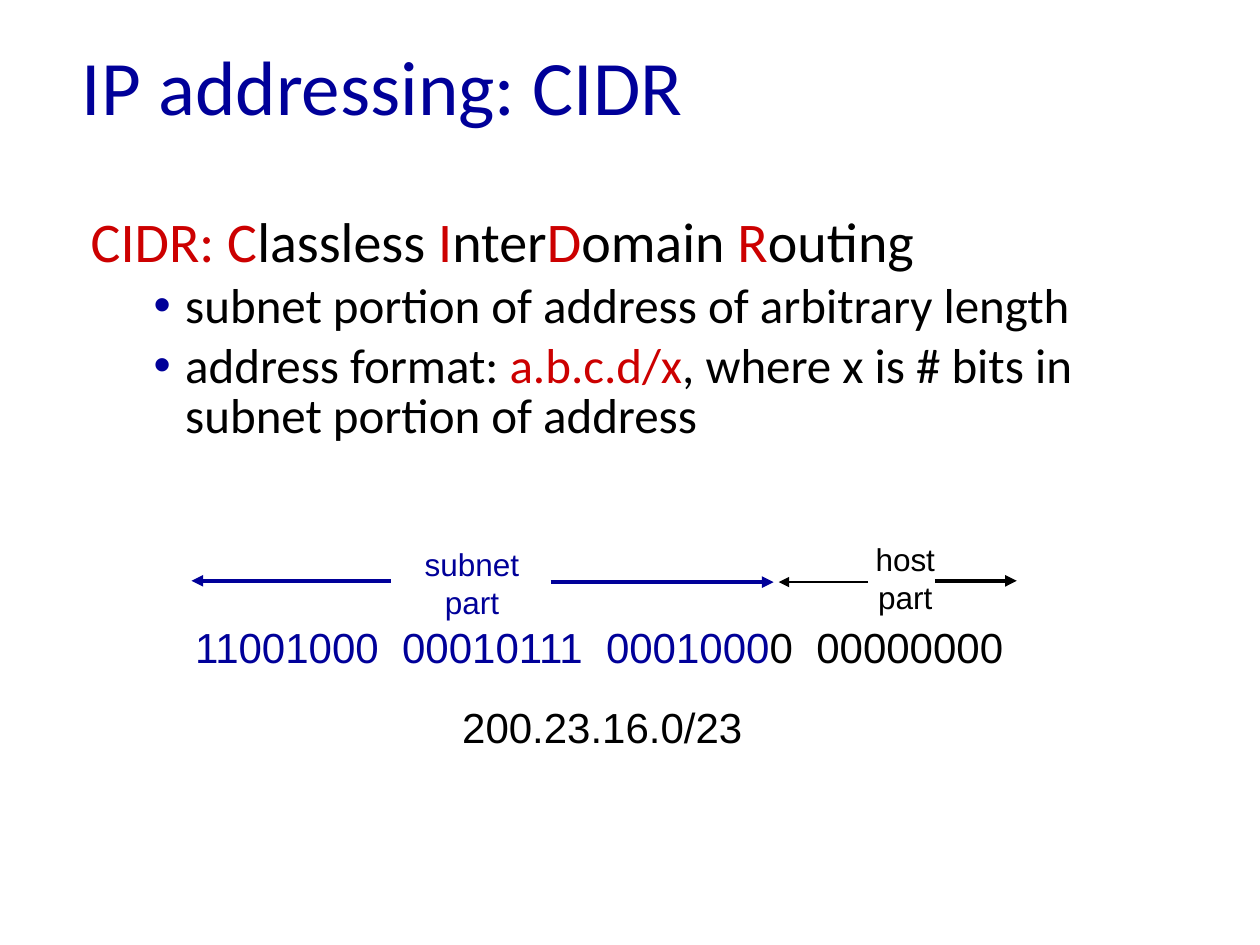
"""Build a slide on CIDR addressing with a split of the address bits."""
from lxml import etree
from pptx import Presentation
from pptx.dml.color import RGBColor
from pptx.enum import shapes as sh, text as tx
from pptx.oxml import ns
from pptx.util import Inches, Pt

BLUE = RGBColor(0x00, 0x00, 0x99)
RED = RGBColor(0xCC, 0x00, 0x00)
BLACK = RGBColor(0x00, 0x00, 0x00)


def write(para, runs, face, size):
    for words, color in runs:
        run = para.add_run()
        run.text = words
        for key, value in {"name": face, "size": Pt(size)}.items():
            setattr(run.font, key, value)
        run.font.color.rgb = color


def place(shape, *box):
    for key, value in zip(("left", "top", "width", "height"), box):
        setattr(shape, key, Inches(value))


deck = Presentation()
deck.slide_width, deck.slide_height = Inches(10), Inches(7.5)
slide = deck.slides.add_slide(deck.slide_layouts[1])

title, body = slide.placeholders
place(title, 0.55, 0.21, 8.5, 0.93)
place(body, 0.62, 1.67, 8.87, 3.47)
for holder in (title, body):
    holder.text_frame.auto_size = tx.MSO_AUTO_SIZE.NONE
title.text_frame.vertical_anchor = tx.MSO_ANCHOR.MIDDLE
head = title.text_frame.paragraphs[0]
head.alignment = tx.PP_ALIGN.LEFT
write(head, [("IP addressing: CIDR", BLUE)], "Calibri", 44)

points = [
    (0, 32, [("CIDR: C", RED), ("lassless ", BLACK), ("I", RED), ("nter", BLACK),
             ("D", RED), ("omain ", BLACK), ("R", RED), ("outing", BLACK)]),
    (1, 28, [("subnet portion of address of arbitrary length", BLACK)]),
    (1, 28, [("address format: ", BLACK), ("a.b.c.d/x", RED),
             (", where x is # bits in subnet portion of address", BLACK)]),
]
frame = body.text_frame
for num, (level, size, runs) in enumerate(points):
    para = frame.add_paragraph() if num else frame.paragraphs[0]
    para.level = level
    para.line_spacing = 0.85
    write(para, runs, "Calibri", size)
    props = para._p.get_or_add_pPr()
    left, hang = ((0.38, -0.38), (0.75, -0.25))[level]
    props.set("marL", str(Inches(left)))
    props.set("indent", str(Inches(hang)))
    if level:
        tint = etree.SubElement(props, ns.qn("a:buClr"))
        etree.SubElement(tint, ns.qn("a:srgbClr"), val=str(BLUE))
        etree.SubElement(props, ns.qn("a:buFont"), typeface="Arial")
        etree.SubElement(props, ns.qn("a:buChar"), char="•")
    else:
        etree.SubElement(props, ns.qn("a:buNone"))

LEFT, MID = tx.PP_ALIGN.LEFT, tx.PP_ALIGN.CENTER
labels = [
    ((1.45, 4.88, 6.7, 0.5), 24, LEFT,
     [[("11001000  00010111  0001000", BLUE), ("0  00000000", BLACK)]]),
    ((3.27, 4.28, 0.95, 0.7), 18, MID, [[("subnet", BLUE)], [("part", BLUE)]]),
    ((6.85, 4.24, 0.67, 0.7), 18, MID, [[("host", BLACK)], [("part", BLACK)]]),
    ((3.57, 5.52, 2.43, 0.5), 24, LEFT, [[("200.23.16.0/23", BLACK)]]),
]
for box, size, align, lines in labels:
    frame = slide.shapes.add_textbox(*map(Inches, box)).text_frame
    frame.word_wrap = False
    frame.auto_size = tx.MSO_AUTO_SIZE.SHAPE_TO_FIT_TEXT
    for num, runs in enumerate(lines):
        para = frame.add_paragraph() if num else frame.paragraphs[0]
        para.alignment = align
        write(para, runs, "Arial", size)

arrows = [
    (3.1, 1.52, 4.61, BLUE, 2.25),
    (4.37, 6.14, 4.62, BLUE, 2.25),
    (6.89, 6.18, 4.62, BLACK, 1.5),
    (7.42, 8.07, 4.61, BLACK, 2.25),
]
for start, end, level, color, width in arrows:
    ends = map(Inches, (start, level, end, level))
    arrow = slide.shapes.add_connector(sh.MSO_CONNECTOR.STRAIGHT, *ends)
    arrow.line.color.rgb = color
    arrow.line.width = Pt(width)
    etree.SubElement(arrow.line._get_or_add_ln(), ns.qn("a:tailEnd"), type="triangle")
    etree.SubElement(arrow._element.spPr, ns.qn("a:effectLst"))

deck.save("out.pptx")
